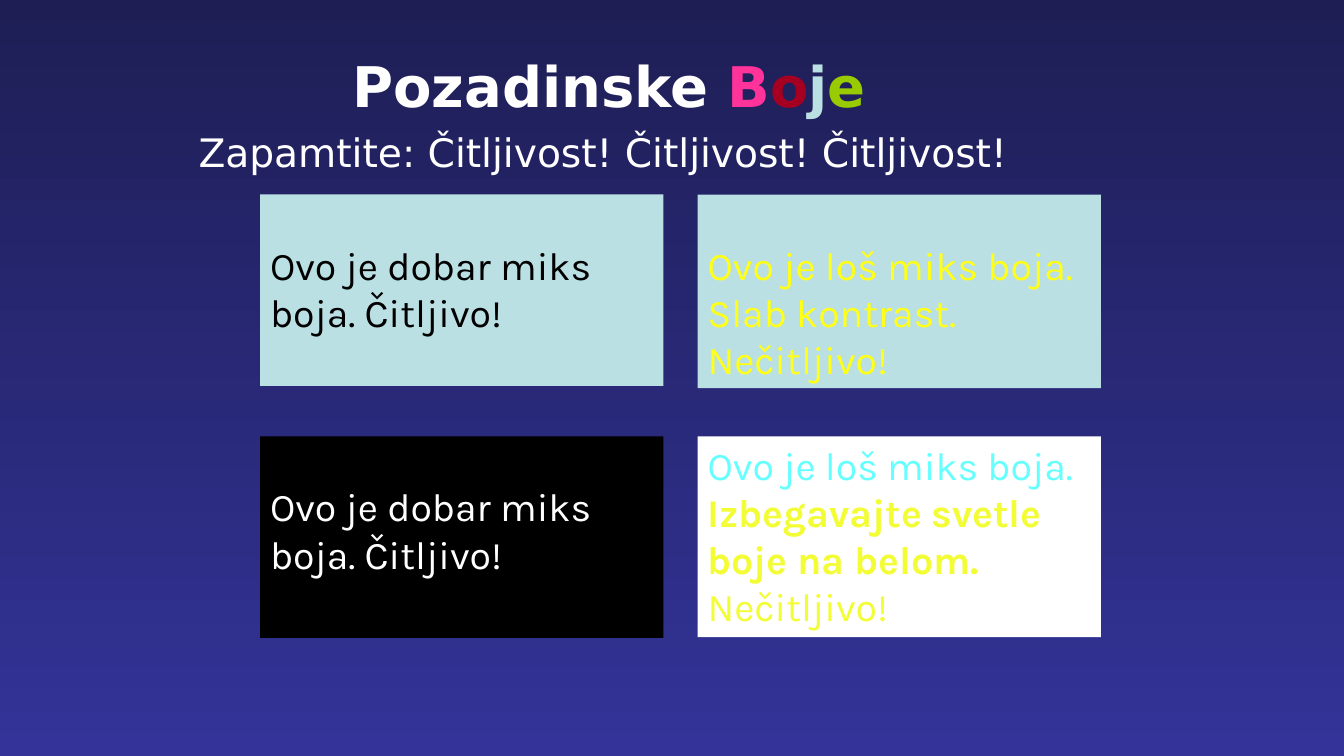
import pptx
import pptx.util
import pptx.dml.color
import pptx.enum.shapes
import pptx.enum.text

Inches = pptx.util.Inches
Shapes = pptx.enum.shapes.MSO_SHAPE
Text = pptx.enum.text

COLORS = {
    "night": "1E1E55", "indigo": "333399", "white": "FFFFFF",
    "black": "000000", "pale": "BBE0E3", "pink": "FF3399",
    "red": "A50021", "green": "99CC00", "yellow": "FFFF17",
    "lemon": "F3FD35", "cyan": "66FFFF",
}
HEAD = {"name": "DejaVu Sans", "size": pptx.util.Pt(40), "bold": True}
SUB = {"name": "DejaVu Sans", "size": pptx.util.Pt(28), "bold": False}
BODY = {"name": "Karla", "size": pptx.util.Pt(28), "bold": False}
STRONG = BODY | {"bold": True}

TITLE = [
    [("Pozadinske ", "white", HEAD), ("B", "pink", HEAD), ("o", "red", HEAD),
     ("j", "pale", HEAD), ("e", "green", HEAD)],
    [("Zapamtite: Čitljivost! Čitljivost! Čitljivost! ", "white", SUB)],
]
GOOD = "Ovo je dobar miks boja. Čitljivo!"
CARDS = [
    ("pale", 1.9, 0.46, [[(GOOD, "black", BODY)]]),
    ("pale", 1.92, 0.46, [
        [("Ovo je loš miks boja. Slab kontrast.", "yellow", BODY)],
        [("Nečitljivo!", "yellow", BODY)]]),
    ("black", 2, 0.46, [[(GOOD, "white", BODY)]]),
    ("white", 1.99, 0.05, [
        [("Ovo je loš miks boja. ", "cyan", BODY),
         ("Izbegavajte svetle boje na belom.", "lemon", STRONG)],
        [("Nečitljivo!", "lemon", BODY)]]),
]


def tint(name):
    """Return the named colour."""
    return pptx.dml.color.RGBColor.from_string(COLORS[name])


def apply(item, form):
    """Set each attribute of a format dict."""
    for key, value in form.items():
        setattr(item, key, value)


def write(frame, lines, form, para):
    """Fill a text frame with lines of coloured runs."""
    apply(frame, form)
    for num, line in enumerate(lines):
        item = frame.add_paragraph() if num else frame.paragraphs[0]
        apply(item, para)
        for text, color, font in line:
            run = item.add_run()
            run.text = text
            apply(run.font, font)
            run.font.color.rgb = tint(color)


def paint(slide):
    """Give the slide its vertical gradient."""
    fill = slide.background.fill
    fill.gradient()
    fill.gradient_angle = 270
    for stop, name in zip(fill.gradient_stops, ("night", "indigo")):
        stop.color.rgb = tint(name)


def head(slide, left, top, width, height):
    """Place the title and its subline."""
    title = slide.shapes.title
    apply(title, {"left": Inches(left), "top": Inches(top),
                  "width": Inches(width), "height": Inches(height)})
    write(title.text_frame, TITLE,
          {"word_wrap": False, "auto_size": Text.MSO_AUTO_SIZE.NONE,
           "vertical_anchor": Text.MSO_ANCHOR.TOP},
          {"alignment": Text.PP_ALIGN.CENTER, "line_spacing": 1.2,
           "space_before": pptx.util.Pt(0)})


def grid(slide, left, top, width, step_x, step_y):
    """Place the sample cards in two columns."""
    for num, (color, height, inset, lines) in enumerate(CARDS):
        row, col = divmod(num, 2)
        card = slide.shapes.add_shape(
            Shapes.RECTANGLE, Inches(left + col * step_x),
            Inches(top + row * step_y), Inches(width), Inches(height))
        card.shadow.inherit = False
        card.fill.solid()
        card.fill.fore_color.rgb = tint(color)
        card.line.fill.background()
        write(card.text_frame, lines,
              {"word_wrap": True, "margin_top": Inches(inset),
               "vertical_anchor": Text.MSO_ANCHOR.TOP},
              {"alignment": Text.PP_ALIGN.LEFT})


def main():
    """Build and save the slide."""
    deck = pptx.Presentation()
    apply(deck, {"slide_width": Inches(13.33), "slide_height": Inches(7.5)})
    slide = deck.slides.add_slide(deck.slide_layouts[5])
    paint(slide)
    head(slide, 1.77, 0.33, 8.54, 1.41)
    grid(slide, 2.58, 1.93, 4, 4.34, 2.4)
    deck.save("out.pptx")


if __name__ == "__main__":
    main()
